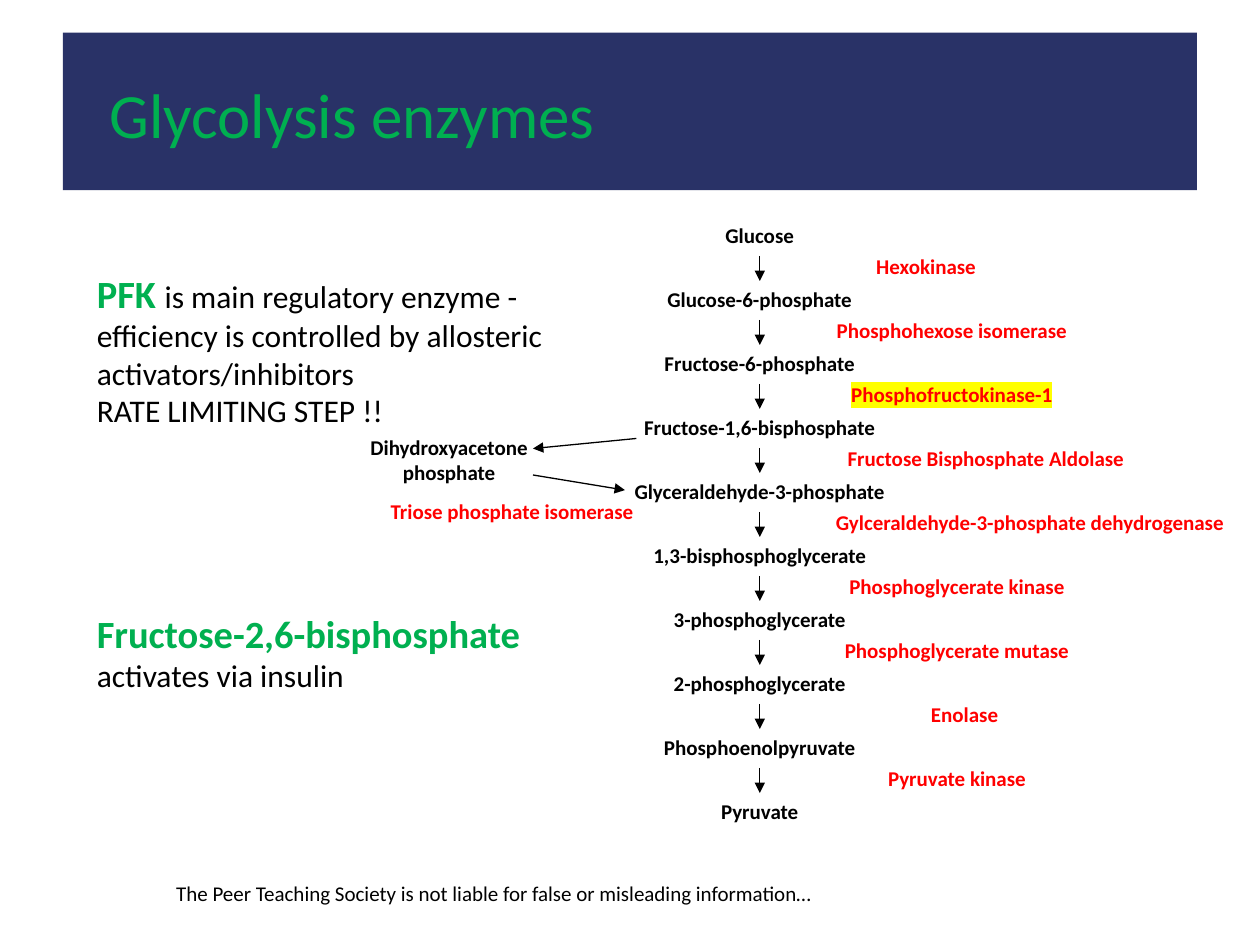
from lxml import etree
from pptx import Presentation
from pptx import util as u
from pptx.dml.color import RGBColor
from pptx.enum import shapes, text
from pptx.oxml import ns

BLACK = RGBColor(0x00, 0x00, 0x00)
NAVY = RGBColor(0x29, 0x32, 0x67)
GREEN = RGBColor(0x00, 0xB0, 0x50)
RED = RGBColor(0xFF, 0x00, 0x00)
YELLOW = RGBColor(0xFF, 0xFF, 0x00)

AXIS = 6.03
STEP = 0.508
LABEL_HEIGHT = 0.37
METABOLITES = [
    ("Glucose", 2), ("Glucose-6-phosphate", 2.17),
    ("Fructose-6-phosphate", 2.17), ("Fructose-1,6-bisphosphate", 2.63),
    ("Glyceraldehyde-3-phosphate", 2.87), ("1,3-bisphosphoglycerate", 2.49),
    ("3-phosphoglycerate", 2.17), ("2-phosphoglycerate", 2.17),
    ("Phosphoenolpyruvate", 2.17), ("Pyruvate", 2.17),
]
ENZYMES = [
    ("Hexokinase", 6.35, 2, None),
    ("Phosphohexose isomerase", 6.35, 2.41, None),
    ("Phosphofructokinase-1", 6.35, 2.41, YELLOW),
    ("Fructose Bisphosphate Aldolase", 6.37, 2.91, None),
    ("Gylceraldehyde-3-phosphate dehydrogenase", 6.25, 3.85, None),
    ("Phosphoglycerate kinase", 6.39, 2.41, None),
    ("Phosphoglycerate mutase", 6.39, 2.41, None),
    ("Enolase", 6.45, 2.41, None),
    ("Pyruvate kinase", 6.39, 2.41, None),
]
NOTES = [
    ([("PFK ", True),
      ("is main regulatory enzyme - efficiency is controlled by allosteric "
       "activators/inhibitors", False)], 0),
    ([("RATE LIMITING STEP !!", False)], 0),
    ([("Fructose-2,6-bisphosphate ", True),
      ("activates via insulin", False)], 103),
]


class Painter:
    font_name = "Calibri"

    def __init__(self, page):
        self.page = page

    def style(self, font, size, color, bold=False):
        font.name = self.font_name
        font.size = u.Pt(size)
        font.bold = bold
        font.color.rgb = color

    def banner(self, left, top, width, height):
        box = self.page.shapes.add_shape(
            shapes.MSO_SHAPE.RECTANGLE, *map(u.Inches, (left, top, width, height)))
        box.shadow.inherit = False
        box.fill.solid()
        box.fill.fore_color.rgb = NAVY
        box.line.fill.background()

    def title(self, words, left, top, width, height):
        box = self.page.shapes.title
        box.left, box.top, box.width, box.height = map(
            u.Inches, (left, top, width, height))
        frame = box.text_frame
        frame.text = words
        frame.auto_size = text.MSO_AUTO_SIZE.NONE
        frame.vertical_anchor = text.MSO_ANCHOR.TOP
        para = frame.paragraphs[0]
        para.alignment = text.PP_ALIGN.LEFT
        self.style(para.font, 36, GREEN)
        self.page.shapes._spTree.append(box._element)

    def frame(self, left, top, width, height):
        box = self.page.shapes.add_textbox(
            *map(u.Inches, (left, top, width, height)))
        box.text_frame.word_wrap = True
        return box.text_frame

    def label(self, words, left, top, width, height=LABEL_HEIGHT, color=BLACK,
              bold=True, align=text.PP_ALIGN.CENTER, highlight=None):
        para = self.frame(left, top, width, height).paragraphs[0]
        para.alignment = align
        span = para.add_run()
        span.text = words
        self.style(para.font, 12, color, bold)
        if highlight is not None:
            mark = etree.SubElement(span.font._element, ns.qn("a:highlight"))
            etree.SubElement(mark, ns.qn("a:srgbClr"), val=str(highlight))

    def notes(self, entries, left, top, width, height):
        frame = self.frame(left, top, width, height)
        frame.margin_top = frame.margin_bottom = u.Inches(0.1)
        for index, (spans, gap) in enumerate(entries):
            para = frame.add_paragraph() if index else frame.paragraphs[0]
            para.space_before = u.Pt(gap)
            for words, key_term in spans:
                span = para.add_run()
                span.text = words
                self.style(span.font, 22 if key_term else 18,
                           GREEN if key_term else BLACK, key_term)

    def arrow(self, *ends):
        line = self.page.shapes.add_connector(
            shapes.MSO_CONNECTOR.STRAIGHT, *map(u.Inches, ends))
        line.line.color.rgb = BLACK
        line.line.width = u.Pt(0.75)
        etree.SubElement(line.line._get_or_add_ln(), ns.qn("a:tailEnd"),
                         type="triangle")
        etree.SubElement(line._element.spPr, ns.qn("a:effectLst"))


def main():
    deck = Presentation()
    deck.slide_width, deck.slide_height = u.Inches(10), u.Inches(7.5)
    painter = Painter(deck.slides.add_slide(deck.slide_layouts[5]))

    painter.label(
        "The Peer Teaching Society is not liable for false or misleading information…",
        1.3, 6.94, 5.54, 0.3, bold=False, align=text.PP_ALIGN.LEFT)
    painter.banner(0.5, 0.26, 9, 1.25)
    painter.title("Glycolysis enzymes", 0.77, 0.55, 4.67, 0.61)

    for row, (name, width) in enumerate(METABOLITES):
        painter.label(name, AXIS - width / 2, 1.72 + row * STEP, width)
    for row, (name, left, width, highlight) in enumerate(ENZYMES):
        top = 2.03 + row * STEP
        painter.arrow(AXIS, top, AXIS, top + 0.2)
        painter.label(name, left, 1.96 + row * STEP, width, color=RED,
                      highlight=highlight)

    painter.label("Dihydroxyacetone phosphate", 2.8, 3.4, 1.53, 0.62)
    painter.arrow(5.05, 3.48, 4.23, 3.56)
    painter.arrow(4.23, 3.77, 4.96, 3.89)
    painter.label("Triose phosphate isomerase", 2.86, 3.91, 2.41, 0.62, color=RED)
    painter.notes(NOTES, 0.67, 2.04, 4.32, 4.41)
    deck.save("out.pptx")


if __name__ == "__main__":
    main()
